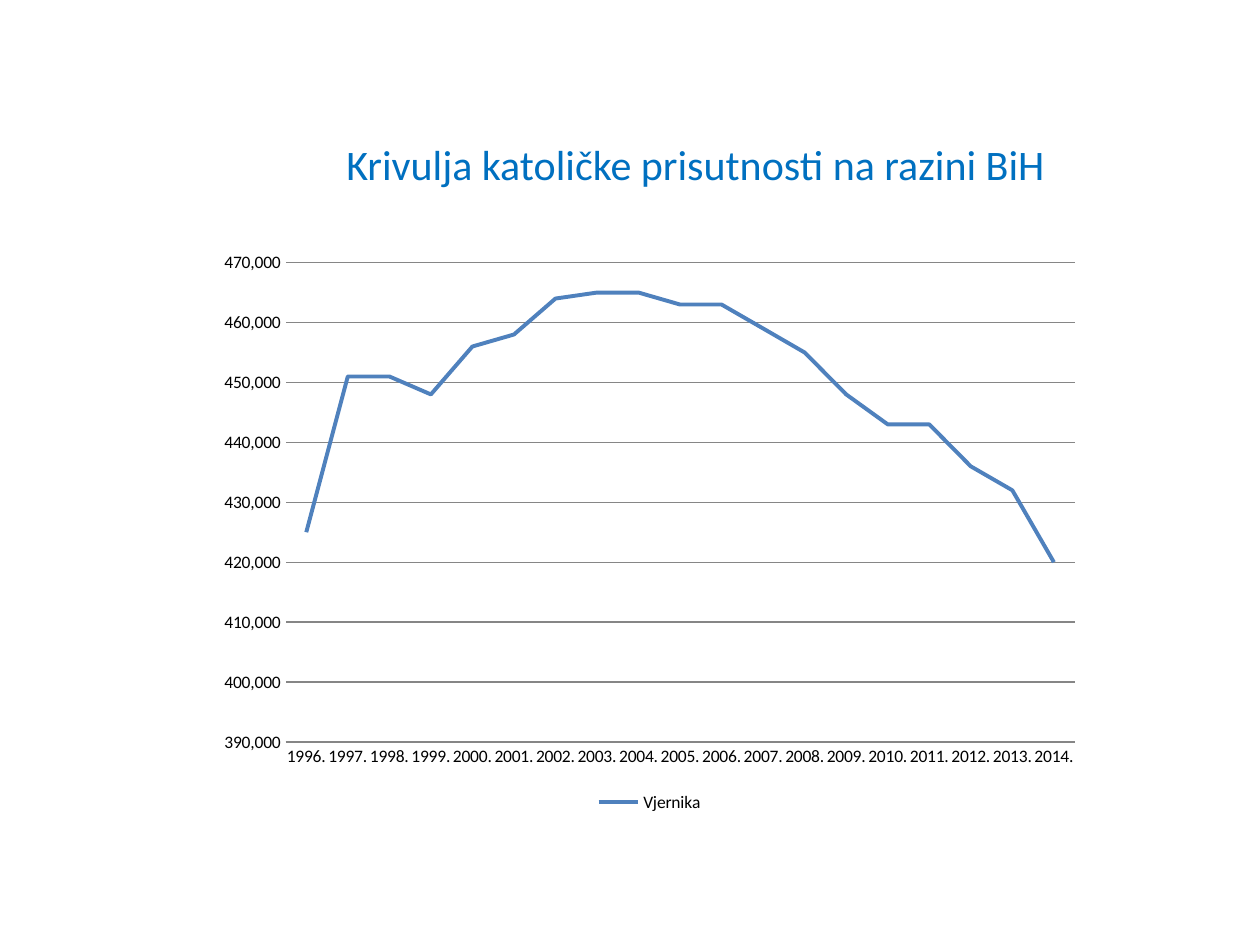
from pptx import Presentation
from pptx.chart.data import CategoryChartData
from pptx.dml.color import RGBColor
from pptx.enum.chart import XL_CHART_TYPE, XL_LEGEND_POSITION, XL_TICK_MARK
from pptx.enum.text import MSO_ANCHOR, PP_ALIGN
from pptx.util import Inches, Pt

FONT = "Calibri"
FIRST_YEAR = 1996
# Rounded to the nearest thousand
BELIEVERS = [
    425000, 451000, 451000, 448000, 456000, 458000, 464000, 465000, 465000, 463000,
    463000, 459000, 455000, 448000, 443000, 443000, 436000, 432000, 420000,
]


def color(hex_value):
    return RGBColor.from_string(hex_value)


def style_font(font, size, hex_value):
    font.name = FONT
    font.size = Pt(size)
    font.bold = False
    font.color.rgb = color(hex_value)


def style_line(line, width, hex_value):
    line.width = Pt(width)
    line.color.rgb = color(hex_value)


def add_title(page, left, top, width, height):
    box = page.shapes.add_textbox(left, top, width, height)
    frame = box.text_frame
    frame.word_wrap = True
    frame.vertical_anchor = MSO_ANCHOR.MIDDLE
    frame.text = "Krivulja katoličke prisutnosti na razini BiH"
    para = frame.paragraphs[0]
    para.alignment = PP_ALIGN.CENTER
    style_font(para.runs[0].font, 24, "0070C0")


def add_believers_chart(page, left, top, width, height):
    data = CategoryChartData(number_format="#,##0")
    data.categories = [f"{FIRST_YEAR + i}." for i in range(len(BELIEVERS))]
    data.add_series("Vjernika", BELIEVERS)
    chart = page.shapes.add_chart(
        XL_CHART_TYPE.LINE, left, top, width, height, data
    ).chart
    chart.has_title = False
    style_font(chart.font, 10, "000000")

    # Legend
    chart.has_legend = True
    chart.legend.position = XL_LEGEND_POSITION.BOTTOM
    chart.legend.include_in_layout = False

    # Axes
    years, counts = chart.category_axis, chart.value_axis
    for axis in (years, counts):
        axis.major_tick_mark = XL_TICK_MARK.NONE
        axis.minor_tick_mark = XL_TICK_MARK.NONE
    style_line(years.format.line, 0.75, "868686")
    counts.minimum_scale = 390000
    counts.maximum_scale = 470000
    counts.major_unit = 10000
    counts.tick_labels.number_format = "#,##0"
    counts.tick_labels.number_format_is_linked = False
    counts.format.line.fill.background()
    counts.has_major_gridlines = True
    style_line(counts.major_gridlines.format.line, 0.75, "868686")

    # Curve
    chart.plots[0].vary_by_categories = False
    curve = chart.plots[0].series[0]
    curve.smooth = False
    style_line(curve.format.line, 2.25, "4F81BD")


def main():
    deck = Presentation()
    deck.slide_width = Inches(10)
    deck.slide_height = Inches(7.5)
    page = deck.slides.add_slide(deck.slide_layouts[6])
    add_title(page, Inches(1.26), Inches(0.67), Inches(8.52), Inches(1.25))
    add_believers_chart(page, Inches(1.64), Inches(1.915), Inches(7.03), Inches(4.57))
    deck.save("out.pptx")


if __name__ == "__main__":
    main()
